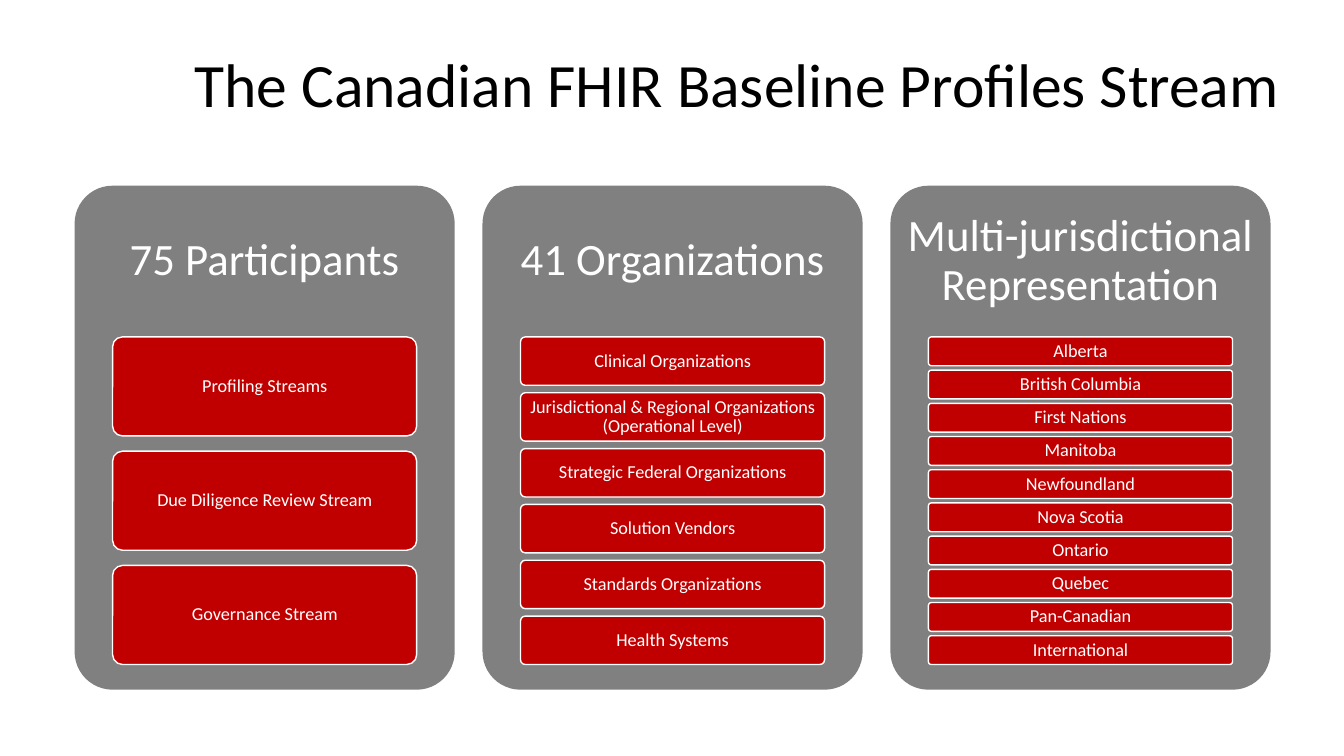
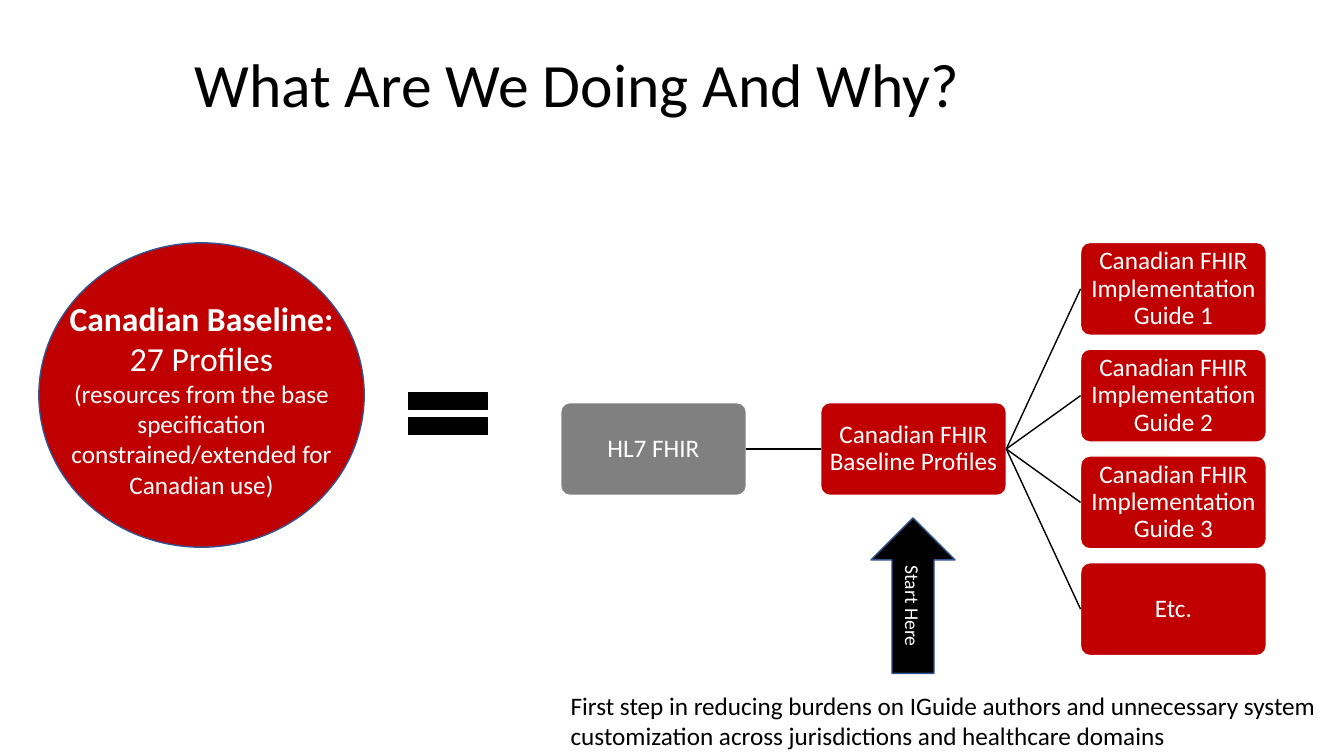
from lxml import etree
from pptx import Presentation
from pptx.dml.color import RGBColor
from pptx.enum.shapes import MSO_CONNECTOR, MSO_SHAPE
from pptx.enum.text import MSO_ANCHOR, PP_ALIGN
from pptx.oxml.ns import qn
from pptx.util import Cm, Pt

ROUNDED = MSO_SHAPE.ROUNDED_RECTANGLE
CIRCLE = MSO_SHAPE.FLOWCHART_CONNECTOR
EQUALS = MSO_SHAPE.MATH_EQUAL
UP_ARROW = MSO_SHAPE.UP_ARROW
STRAIGHT = MSO_CONNECTOR.STRAIGHT
TOP, MIDDLE = MSO_ANCHOR.TOP, MSO_ANCHOR.MIDDLE
LEFT, CENTER = PP_ALIGN.LEFT, PP_ALIGN.CENTER
LEFT_SIDE, RIGHT_SIDE = 1, 3

FONT = "Calibri"
COLORS = {
    "red": "C00000",
    "gray": "808080",
    "white": "FFFFFF",
    "black": "000000",
    "blue": "325491",
}
TITLE_BOX = (4.65, 0.36, 29.21, 3.68)
DEFAULT_INSETS = (0.25, 0.13)

PILLARS = [
    ("75 Participants", [
        "Profiling Streams", "Due Diligence Review Stream", "Governance Stream",
    ]),
    ("41 Organizations", [
        "Clinical Organizations",
        "Jurisdictional & Regional Organizations (Operational Level)",
        "Strategic Federal Organizations", "Solution Vendors",
        "Standards Organizations", "Health Systems",
    ]),
    ("Multi-jurisdictional Representation", [
        "Alberta", "British Columbia", "First Nations", "Manitoba", "Newfoundland",
        "Nova Scotia", "Ontario", "Quebec", "Pan-Canadian", "International",
    ]),
]
GUIDES = [f"Canadian FHIR Implementation Guide {number}" for number in (1, 2, 3)] + ["Etc."]


def color(name):
    return RGBColor.from_string(COLORS[name])


def write_text(shape, paragraphs, size=18, text_color="white", align=CENTER,
               anchor=MIDDLE, insets=DEFAULT_INSETS, line_spacing=None):
    frame = shape.text_frame
    frame.word_wrap = True
    frame.vertical_anchor = anchor
    frame.margin_left = frame.margin_right = Cm(insets[0])
    frame.margin_top = frame.margin_bottom = Cm(insets[1])
    if isinstance(paragraphs, str):
        paragraphs = [(paragraphs, size, False)]
    for index, (text, points, bold) in enumerate(paragraphs):
        paragraph = frame.add_paragraph() if index else frame.paragraphs[0]
        paragraph.alignment = align
        paragraph.line_spacing = line_spacing
        run = paragraph.add_run()
        run.text = text
        run.font.name = FONT
        run.font.size = Pt(points)
        run.font.bold = bold
        run.font.color.rgb = color(text_color)


def add_text(slide, box, paragraphs, **text_format):
    shape = slide.shapes.add_textbox(*map(Cm, box))
    write_text(shape, paragraphs, **text_format)


def add_block(slide, kind, box, fill, line=None):
    shape = slide.shapes.add_shape(kind, *map(Cm, box))
    shape.shadow.inherit = False
    shape.fill.solid()
    shape.fill.fore_color.rgb = color(fill)
    if line:
        shape.line.color.rgb = color(line)
        shape.line.width = Pt(1)
    else:
        shape.line.fill.background()
    if kind == ROUNDED:
        shape.adjustments[0] = 0.1
    return shape


def add_link(slide, source, target):
    connector = slide.shapes.add_connector(STRAIGHT, 0, 0, 0, 0)
    connector.begin_connect(source, RIGHT_SIDE)
    connector.end_connect(target, LEFT_SIDE)
    connector.line.color.rgb = color("black")
    connector.line.width = Pt(1)
    properties = connector.element.find(qn("p:spPr"))
    etree.SubElement(properties, qn("a:effectLst"))


def add_titled_slide(presentation, title):
    slide = presentation.slides.add_slide(presentation.slide_layouts[6])
    add_text(slide, TITLE_BOX, title, size=44, text_color="black", align=LEFT,
             line_spacing=0.9)
    return slide


def add_pillar(slide, box, heading, items):
    left, top, width, height = box
    add_block(slide, ROUNDED, box, "gray")
    add_text(slide, (left, top, width, height * 0.3), heading, size=32,
             insets=(0.33, 0.33), line_spacing=0.9)
    gap_ratio = 2 / 13
    item_height = height * 0.65 / (len(items) + (len(items) - 1) * gap_ratio)
    for index, item in enumerate(items):
        item_top = top + height * 0.3 + index * item_height * (1 + gap_ratio)
        shape = add_block(slide, ROUNDED,
                          (left + width * 0.1, item_top, width * 0.8, item_height),
                          "red", "white")
        write_text(shape, item, size=13, insets=(0.1, 0.08), line_spacing=0.9)


def add_node(slide, box, text, fill):
    shape = add_block(slide, ROUNDED, box, fill, "white")
    write_text(shape, text, insets=(0.03, 0.03), line_spacing=0.9)
    return shape


def add_profile_tree(slide, box):
    left, top, width, height = box
    node_width = width / 3.8
    node_height = node_width / 2
    column_step = node_width * 1.4
    row_step = node_height * 1.15
    center_top = top + (height - node_height) / 2
    standard = add_node(slide, (left, center_top, node_width, node_height),
                        "HL7 FHIR", "gray")
    baseline = add_node(slide, (left + column_step, center_top, node_width, node_height),
                        "Canadian FHIR Baseline Profiles", "red")
    add_link(slide, standard, baseline)
    for index, text in enumerate(GUIDES):
        guide_box = (left + 2 * column_step, top + index * row_step, node_width, node_height)
        add_link(slide, baseline, add_node(slide, guide_box, text, "red"))


def add_baseline_circle(slide, box):
    left, top, width, height = box
    add_block(slide, CIRCLE, box, "red", "blue")
    add_text(slide, (left + 0.41, top + 1.25, width - 0.82, height - 2.3), [
        ("Canadian Baseline:", 24, True),
        ("27 Profiles", 24, False),
        ("(resources from the base specification constrained/extended for Canadian use)",
         18, False),
    ], anchor=TOP)


def add_start_arrow(slide, box):
    arrow = add_block(slide, UP_ARROW, box, "black", "blue")
    write_text(arrow, "Start Here", size=14)
    arrow.element.find(".//" + qn("a:bodyPr")).set("vert", "vert")


def build_stream_slide(presentation):
    slide = add_titled_slide(presentation, "The Canadian FHIR Baseline Profiles Stream")
    for index, (heading, items) in enumerate(PILLARS):
        add_pillar(slide, (1.88 + index * 10.28, 4.68, 9.58, 12.7), heading, items)


def build_purpose_slide(presentation):
    slide = add_titled_slide(presentation, "What Are We Doing And Why?")
    add_profile_tree(slide, (14.13, 6.11, 17.78, 10.41))
    add_baseline_circle(slide, (0.98, 6.12, 8.2, 7.67))
    add_start_arrow(slide, (21.95, 13.05, 2.12, 3.92))
    add_block(slide, EQUALS, (9.93, 9.53, 2.72, 1.78), "black", "black")
    add_text(slide, (14.13, 17.27, 19.3, 1.78),
             "First step in reducing burdens on IGuide authors and unnecessary system "
             "customization across jurisdictions and healthcare domains",
             text_color="black", align=LEFT, anchor=TOP)


def main():
    presentation = Presentation()
    presentation.slide_width = Cm(33.87)
    presentation.slide_height = Cm(19.05)
    build_stream_slide(presentation)
    build_purpose_slide(presentation)
    presentation.save("out.pptx")


if __name__ == "__main__":
    main()
